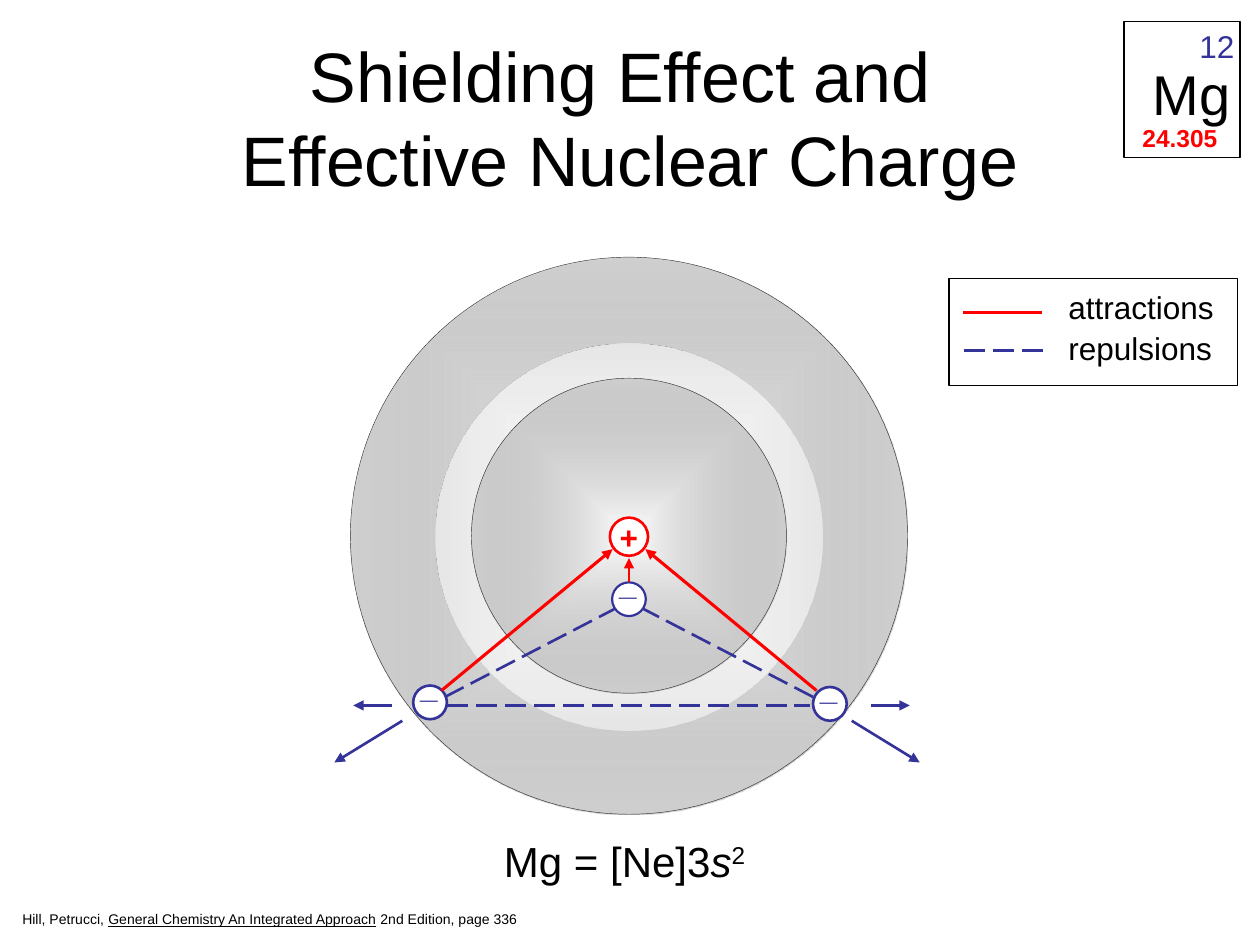
"""Build a slide on shielding and effective nuclear charge in magnesium."""
import dataclasses
import typing

import pptx
import pptx.dml.color
import pptx.enum.dml
import pptx.enum.shapes
import pptx.enum.text
import pptx.oxml
import pptx.oxml.ns
import pptx.util

Cm = pptx.util.Cm
Pt = pptx.util.Pt
SHAPE = pptx.enum.shapes.MSO_SHAPE
ALIGN = pptx.enum.text.PP_ALIGN
ANCHOR = pptx.enum.text.MSO_ANCHOR
FIT = pptx.enum.text.MSO_AUTO_SIZE
COLORS = {
    "white": "FFFFFF", "black": "000000", "red": "FF0000", "blue": "333399",
    "edge": "333333", "gray": "808080", "pale": "EAEAEA",
}
FONT = "Arial"
AXIS = 12.68


@dataclasses.dataclass
class Run:
    text: str
    size: float = 18
    color: str = "black"
    bold: bool = False
    slant: bool = False
    under: bool = False
    raised: bool = False


@dataclasses.dataclass
class Label:
    left: float
    top: float
    width: float
    height: float
    runs: list[Run]


@dataclasses.dataclass
class Disc:
    x: float
    y: float
    size: float
    color: str
    weight: float = 0
    rim: str = "edge"
    alpha: int = 0


@dataclasses.dataclass
class Line:
    x1: float
    y1: float
    x2: float
    y2: float
    color: str = "blue"
    weight: float = 1.5
    dashed: bool = False
    arrow: bool = False


def rgb(name: str) -> pptx.dml.color.RGBColor:
    return pptx.dml.color.RGBColor.from_string(COLORS[name])


def add_run(para: typing.Any, run: Run) -> None:
    part = para.add_run()
    part.text = run.text
    font = part.font
    font.name, font.size = FONT, Pt(run.size)
    font.color.rgb = rgb(run.color)
    font.bold, font.italic, font.underline = run.bold, run.slant, run.under
    if run.raised:
        font._element.set("baseline", "30000")


def add_label(slide: typing.Any, label: Label) -> None:
    box = slide.shapes.add_textbox(
        Cm(label.left), Cm(label.top), Cm(label.width), Cm(label.height))
    box.text_frame.word_wrap = False
    box.text_frame.auto_size = FIT.SHAPE_TO_FIT_TEXT
    for run in label.runs:
        add_run(box.text_frame.paragraphs[0], run)


def shade(shape: typing.Any, color: str, alpha: int) -> None:
    shape._element.spPr.append(pptx.oxml.parse_xml(
        f'<a:gradFill {pptx.oxml.ns.nsdecls("a")} rotWithShape="1"><a:gsLst>'
        f'<a:gs pos="0"><a:srgbClr val="{COLORS["white"]}"/></a:gs>'
        f'<a:gs pos="100000"><a:srgbClr val="{COLORS[color]}">'
        f'<a:alpha val="{alpha * 1000}"/></a:srgbClr></a:gs></a:gsLst>'
        '<a:path path="shape"><a:fillToRect l="50000" t="50000" r="50000" b="50000"/>'
        '</a:path></a:gradFill>'))


def add_disc(slide: typing.Any, disc: Disc) -> typing.Any:
    half = disc.size / 2
    shape = slide.shapes.add_shape(
        SHAPE.OVAL, Cm(disc.x - half), Cm(disc.y - half), Cm(disc.size), Cm(disc.size))
    if disc.alpha:
        shade(shape, disc.color, disc.alpha)
    else:
        shape.fill.solid()
        shape.fill.fore_color.rgb = rgb(disc.color)
    if disc.weight:
        shape.line.color.rgb = rgb(disc.rim)
        shape.line.width = Pt(disc.weight)
    else:
        shape.line.fill.background()
    shape.shadow.inherit = False
    return shape


def add_charge(slide: typing.Any, x: float, y: float, weight: float) -> None:
    add_disc(slide, Disc(x, y, 0.68, "white", weight, "blue"))
    add_label(slide, Label(x - 0.45, y - 0.83, 0.86, 1.02, [Run("_", color="blue", bold=True)]))


def add_line(slide: typing.Any, line: Line) -> None:
    link = slide.shapes.add_connector(
        pptx.enum.shapes.MSO_CONNECTOR.STRAIGHT,
        Cm(line.x1), Cm(line.y1), Cm(line.x2), Cm(line.y2))
    link.line.color.rgb = rgb(line.color)
    link.line.width = Pt(line.weight)
    if line.dashed:
        link.line.dash_style = pptx.enum.dml.MSO_LINE.LONG_DASH
    tags = pptx.oxml.ns.nsdecls("a")
    if line.arrow:
        link.line._get_or_add_ln().append(
            pptx.oxml.parse_xml(f'<a:tailEnd {tags} type="triangle"/>'))
    link._element.spPr.append(pptx.oxml.parse_xml(f"<a:effectLst {tags}/>"))


def add_pair(slide: typing.Any, line: Line, axis: float = AXIS) -> None:
    for side in (-1, 1):
        add_line(slide, dataclasses.replace(
            line, x1=axis + side * line.x1, x2=axis + side * line.x2))


def add_frame(slide: typing.Any, left: float, top: float, width: float, height: float) -> None:
    frame = slide.shapes.add_shape(SHAPE.RECTANGLE, Cm(left), Cm(top), Cm(width), Cm(height))
    frame.fill.background()
    frame.line.color.rgb = rgb("black")
    frame.line.width = Pt(0.75)
    frame.shadow.inherit = False


def set_title(slide: typing.Any) -> None:
    title = slide.shapes.title
    title.left, title.top, title.width, title.height = Cm(1.27), Cm(0.76), Cm(22.86), Cm(3.18)
    frame = title.text_frame
    frame.auto_size = FIT.NONE
    frame.vertical_anchor = ANCHOR.MIDDLE
    para = frame.paragraphs[0]
    para.alignment = ALIGN.CENTER
    add_run(para, Run("Shielding Effect and ", 40))
    para.add_line_break()
    add_run(para, Run("Effective Nuclear Charge", 40))


def add_atom(slide: typing.Any) -> None:
    add_disc(slide, Disc(AXIS, 10.8, 11.23, "gray", 0.25, alpha=37))
    add_disc(slide, Disc(AXIS, 10.83, 7.8, "pale", alpha=88))
    add_disc(slide, Disc(AXIS, 10.8, 6.35, "gray", 0.25, alpha=27))
    core = add_disc(slide, Disc(AXIS, 10.82, 0.77, "white", 1.5, "red"))
    core.text_frame.word_wrap = False
    core.text_frame.vertical_anchor = ANCHOR.MIDDLE
    core.text_frame.paragraphs[0].alignment = ALIGN.CENTER
    add_run(core.text_frame.paragraphs[0], Run("+", color="red", bold=True))
    add_charge(slide, 16.73, 14.19, 1.5)
    add_charge(slide, 8.67, 14.16, 1.5)
    add_pair(slide, Line(3.78, 13.92, 0.33, 11.07, "red", 1.75, arrow=True))
    add_charge(slide, AXIS, 12.08, 1.25)
    add_line(slide, Line(AXIS, 11.73, AXIS, 11.25, "red", arrow=True))
    add_line(slide, Line(9.02, 14.22, 16.33, 14.22, dashed=True))
    add_pair(slide, Line(3.71, 14.05, 0.28, 12.27, dashed=True))
    add_pair(slide, Line(4.53, 14.53, 5.9, 15.37, arrow=True), 12.64)
    add_pair(slide, Line(4.83, 14.22, 5.61, 14.22, arrow=True), 12.73)


def main() -> None:
    deck = pptx.Presentation()
    deck.slide_width, deck.slide_height = Cm(25.4), Cm(19.05)
    slide = deck.slides.add_slide(deck.slide_layouts[5])
    set_title(slide)
    add_atom(slide)
    add_frame(slide, 19.13, 5.61, 5.82, 2.16)
    add_line(slide, Line(19.41, 6.3, 21.01, 6.3, "red"))
    add_line(slide, Line(19.43, 7.06, 21.03, 7.06, dashed=True))
    add_frame(slide, 22.66, 0.43, 2.34, 2.74)
    labels = [
        Label(21.29, 5.69, 3.43, 1.02, [Run("attractions")]),
        Label(21.29, 6.5, 3.4, 1.02, [Run("repulsions")]),
        Label(9.91, 16.71, 5.41, 1.27, [
            Run("Mg = [Ne]3", 24), Run("s", 24, slant=True), Run("2", 24, raised=True)]),
        Label(0.2, 18.24, 10.54, 0.58, [
            Run("Hill, Petrucci, ", 8),
            Run("General Chemistry An Integrated Approach", 8, under=True),
            Run(" 2nd Edition, page 336", 8)]),
        Label(22.99, 1.07, 2.08, 1.6, [Run("Mg", 32)]),
        Label(22.78, 2.36, 2.1, 0.84, [Run("24.305", 14, "red", True)]),
        Label(23.93, 0.43, 1.22, 1.02, [Run("12", color="blue")]),
    ]
    for label in labels:
        add_label(slide, label)
    deck.save("out.pptx")


if __name__ == "__main__":
    main()
